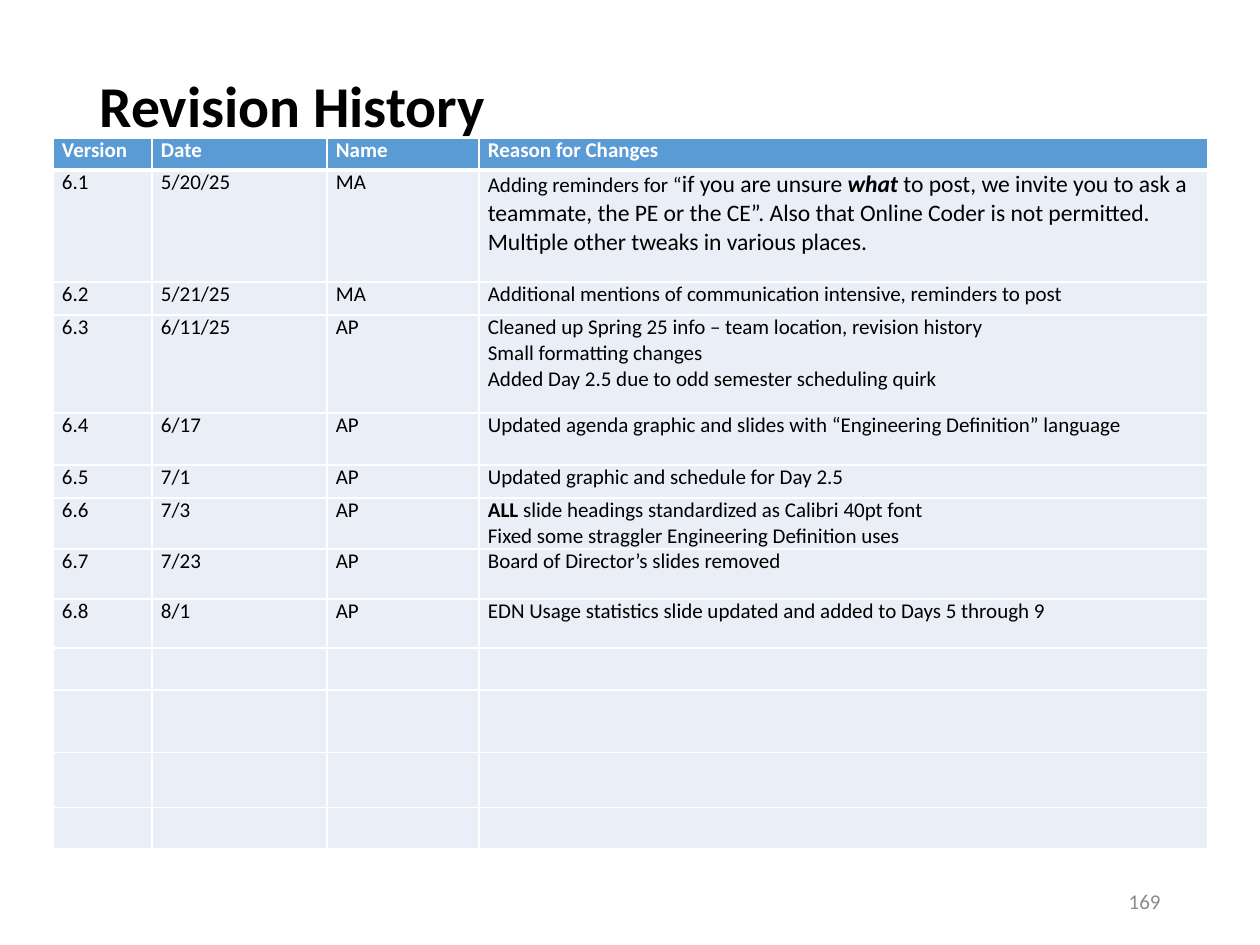
from pptx import Presentation
from pptx.dml.color import RGBColor as Rgb
from pptx.enum.text import MSO_ANCHOR as Anchor, PP_ALIGN as Align
from pptx.oxml.ns import qn
from pptx.util import Pt
from lxml.etree import SubElement as Sub

PX = 914400 // 126
FONT = "Calibri"
HUES = {"head": "5B9BD5", "body": "EAEFF7", "rule": "FFFFFF",
        "ink": "000000", "page": "8C8C8C"}

COLS = [99, 175, 152, 729]
TALL = [32, 112, 33, 98, 52, 33, 51, 50, 49, 42, 63, 55, 41]

# A reason is a list of paragraphs; a paragraph is a list of
# (text, size, bold, italic) runs or a plain string.
HEAD = ["Version", "Date", "Name", ["Reason for Changes"]]
ROWS = [
    ["6.1", "5/20/25", "MA", [[
        ("Adding reminders for “", 12, False, False),
        ("if you are unsure ", 13.5, False, False),
        ("what", 13.5, True, True),
        (" to post, we invite you to ask a teammate, the PE or the CE”. "
         "Also that Online Coder is not permitted. "
         "Multiple other tweaks in various places.", 13.5, False, False)]]],
    ["6.2", "5/21/25", "MA",
     ["Additional mentions of communication intensive, reminders to post"]],
    ["6.3", "6/11/25", "AP",
     ["Cleaned up Spring 25 info – team location, revision history",
      "Small formatting changes",
      "Added Day 2.5 due to odd semester scheduling quirk"]],
    ["6.4", "6/17", "AP",
     ["Updated agenda graphic and slides with “Engineering Definition” language"]],
    ["6.5", "7/1", "AP", ["Updated graphic and schedule for Day 2.5"]],
    ["6.6", "7/3", "AP", [
        [("ALL", 12, True, False),
         (" slide headings standardized as Calibri 40pt font", 12, False, False)],
        "Fixed some straggler Engineering Definition uses"]],
    ["6.7", "7/23", "AP", ["Board of Director’s slides removed"]],
    ["6.8", "8/1", "AP",
     ["EDN Usage statistics slide updated and added to Days 5 through 9"]],
]


def style(run, size, hue, bold=False, slant=False):
    font = run.font
    font.name, font.size = FONT, Pt(size)
    font.bold, font.italic = bold, slant
    font.color.rgb = Rgb.from_string(HUES[hue])


def label(slide, box, text, size, hue, bold=False, align=Align.LEFT,
          anchor=Anchor.MIDDLE, top=6):
    shape = slide.shapes.add_textbox(*[n * PX for n in box])
    frame = shape.text_frame
    frame.word_wrap = True
    frame.vertical_anchor = anchor
    frame.margin_top = top * PX
    frame.text = text
    para = frame.paragraphs[0]
    para.alignment = align
    style(para.runs[0], size, hue, bold)
    return para


def title(slide, box):
    para = label(slide, box, "Revision History", 33, "ink", True,
                 anchor=Anchor.TOP, top=28)
    para.line_spacing = 0.9


def edge(cell, under):
    """White rules on all four sides, with the given width underneath."""
    props = cell._tc.get_or_add_tcPr()
    for side, wide in zip("LRTB", (1, 1, 1, under)):
        line = Sub(props, qn("a:ln" + side), w=str(Pt(wide)))
        fill = Sub(line, qn("a:solidFill"))
        Sub(fill, qn("a:srgbClr"), val=HUES["rule"])


def write(cell, paras, hue, bold):
    frame = cell.text_frame
    for i, item in enumerate(paras):
        para = frame.add_paragraph() if i else frame.paragraphs[0]
        runs = [(item, 12, bold, False)] if isinstance(item, str) else item
        for text, size, heavy, slant in runs:
            run = para.add_run()
            run.text = text
            style(run, size, hue, heavy, slant)


def history(slide, left, top):
    grid = slide.shapes.add_table(
        len(TALL), len(COLS), left * PX, top * PX,
        sum(COLS) * PX, sum(TALL) * PX).table
    for col, wide in zip(grid.columns, COLS):
        col.width = wide * PX
    for row, tall in zip(grid.rows, TALL):
        row.height = tall * PX
    data = [HEAD] + ROWS
    for r, row in enumerate(grid.rows):
        for c, cell in enumerate(row.cells):
            edge(cell, 1 if r else 3)
            cell.fill.solid()
            cell.fill.fore_color.rgb = Rgb.from_string(
                HUES["body" if r else "head"])
            cell.margin_left = cell.margin_right = 9 * PX
            cell.margin_top = cell.margin_bottom = 0
            if r < len(data):
                item = data[r][c]
                paras = [item] if isinstance(item, str) else item
                write(cell, paras, "ink" if r else "rule", r == 0)


def main():
    deck = Presentation()
    deck.slide_width, deck.slide_height = 1260 * PX, 945 * PX
    slide = deck.slides.add_slide(deck.slide_layouts[6])
    title(slide, (87, 50, 1086, 183))
    history(slide, 53, 138)
    # Page number
    label(slide, (890, 876, 283, 50), "169", 12, "page", align=Align.RIGHT)
    deck.save("out.pptx")


if __name__ == "__main__":
    main()
